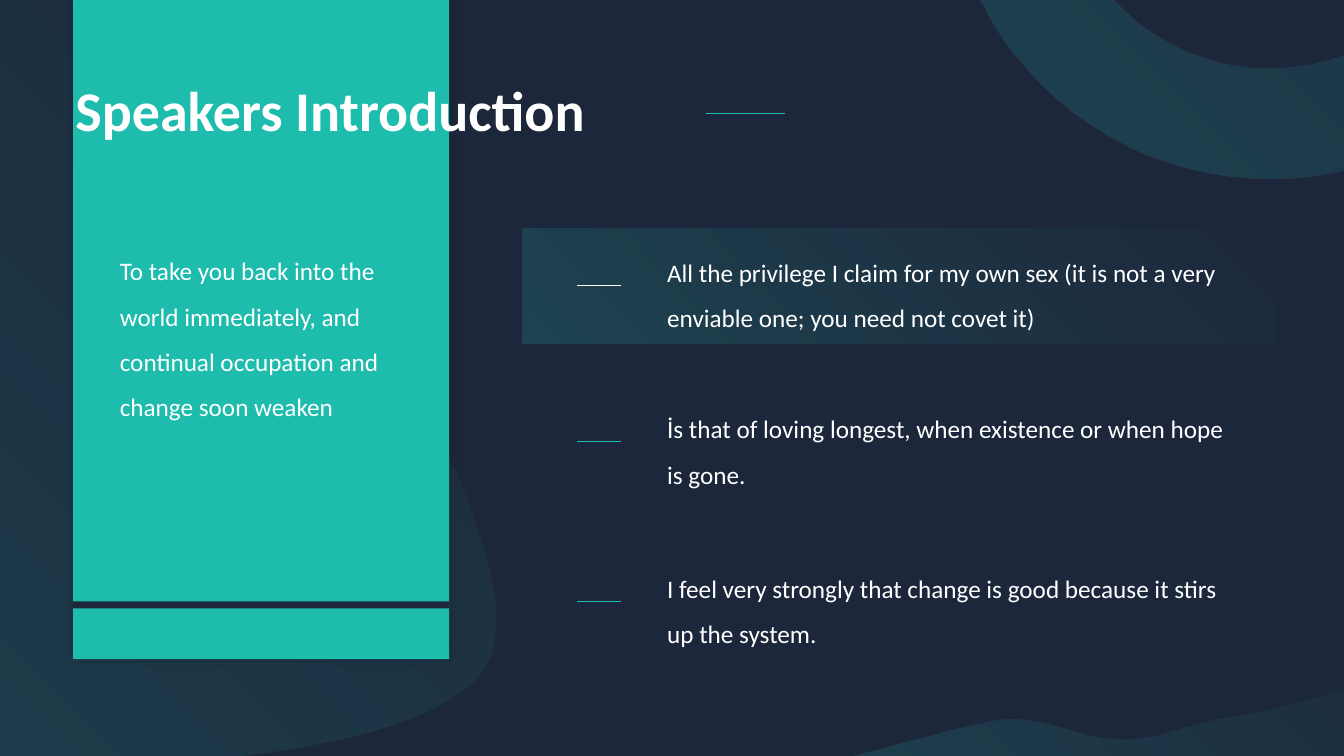
"""Build the speakers introduction slide with a teal side panel and three statements."""
from dataclasses import dataclass
from typing import Any, NamedTuple

from lxml.etree import SubElement
from pptx import Presentation
from pptx.dml.color import RGBColor
from pptx.enum.shapes import MSO_CONNECTOR, MSO_SHAPE
from pptx.enum.text import PP_ALIGN
from pptx.oxml import parse_xml
from pptx.oxml.ns import nsdecls, qn
from pptx.util import Emu, Inches, Pt

SLIDE_COLUMNS, SLIDE_ROWS = 133.33, 75
CELL = Inches(0.1)
Point = tuple[float, float]


@dataclass(frozen=True)
class Theme:
    navy: str = "1D273B"
    teal: str = "1EBCAD"
    white: str = "FFFFFF"
    black: str = "000000"
    font: str = "Calibri"
    title_size: float = 40
    body_size: float = 18
    rule_width: float = 0.75
    shadow_blur: float = 8
    tint_alpha: int = 20000


THEME = Theme()
BODY_FONT = {"size": Pt(THEME.body_size)}
BODY_PARAGRAPH = {"line_spacing": 1.5}


class Area(NamedTuple):
    column: float
    row: float
    columns: float
    rows: float


class Panel(NamedTuple):
    area: Area
    color: str | None = None
    kind: MSO_SHAPE = MSO_SHAPE.RECTANGLE
    ring: float | None = None
    shadow: bool = False


class Wave(NamedTuple):
    area: Area
    start: Point
    curves: list[tuple[Point, Point, Point]]


class Passage(NamedTuple):
    area: Area
    words: str
    font: dict[str, Any] = BODY_FONT
    paragraph: dict[str, Any] = BODY_PARAGRAPH


class Rule(NamedTuple):
    column: float
    row: float
    columns: float
    color: str = THEME.teal


class Statement(NamedTuple):
    row: float
    words: str
    color: str = THEME.teal


LEFT_WAVE = Wave(Area(-52.5, -15, 101.7, 92.2), (48.6, 64.8), [
    ((52.8, 53.5), (30.1, 18.2), (21.5, 9.6)),
    ((12.9, 1), (12.9, -18.9), (0.9, -14.3)),
    ((-11.1, -9.6), (-44.6, 22.8), (-50.7, 37.3)),
    ((-56.8, 51.9), (-47.3, 66.2), (-24.9, 71.3)),
    ((-11.6, 74.4), (-15.9, 78.1), (-3.6, 77)),
    ((8.6, 75.9), (44.5, 76), (48.6, 64.8)),
])
BOTTOM_WAVE = Wave(Area(72.7, 63.6, 82.9, 18.4), (74.5, 81.3), [
    ((65.7, 79.6), (91.1, 73.1), (98.1, 71.6)),
    ((105, 70.2), (108.1, 75.2), (116.1, 72.6)),
    ((124.2, 70), (129.2, 71.4), (140.3, 64.8)),
    ((151.4, 58.3), (161.9, 79.2), (151, 81.9)),
])
SUMMARY = Passage(
    Area(10.9, 23.36, 30.1, 19.2),
    "To take you back into the world immediately, and continual occupation and change soon weaken",
)
TITLE = Passage(
    Area(6.5, 7, 64.5, 7.7), "Speakers Introduction",
    {"size": Pt(THEME.title_size), "bold": True}, {"alignment": PP_ALIGN.JUSTIFY},
)
STATEMENTS = [
    Statement(23.5, "All the privilege I claim for my own sex (it is not a very enviable one; "
                    "you need not covet it)", THEME.white),
    Statement(39.05, "İs that of loving longest, when existence or when hope is gone."),
    Statement(54.88, "I feel very strongly that change is good because it stirs up the system."),
]


def cells(count: float) -> Emu:
    return Emu(round(count * CELL))


def set_values(target: Any, values: dict[str, Any]) -> None:
    for name, value in values.items():
        setattr(target, name, value)


def finish(shape: Any, color: str | None = None) -> None:
    shape.shadow.inherit = False
    shape.line.fill.background()
    if color:
        shape.fill.solid()
        shape.fill.fore_color.rgb = RGBColor.from_string(color)
        return
    shape.fill.background()
    stops = "".join(
        f'<a:gs pos="{position}"><a:srgbClr val="{THEME.teal}"><a:alpha val="{alpha}"/>'
        '</a:srgbClr></a:gs>' for position, alpha in ((0, THEME.tint_alpha), (100000, 0))
    )
    properties = shape._element.spPr
    properties.replace(properties.find(qn("a:noFill")), parse_xml(
        f'<a:gradFill {nsdecls("a")} rotWithShape="1"><a:gsLst>{stops}</a:gsLst>'
        '<a:path path="circle"><a:fillToRect t="100000" r="100000"/></a:path></a:gradFill>'
    ))


def draw_panel(shapes: Any, panel: Panel) -> None:
    shape = shapes.add_shape(panel.kind, *map(cells, panel.area))
    finish(shape, panel.color)
    if panel.ring is not None:
        shape.adjustments[0] = panel.ring
    if panel.shadow:
        cast = SubElement(shape._element.spPr.find(qn("a:effectLst")), qn("a:outerShdw"),
                          blurRad=str(Pt(THEME.shadow_blur)), dist="0", dir="0", algn="ctr")
        shade = SubElement(cast, qn("a:srgbClr"), val=THEME.black)
        SubElement(shade, qn("a:alpha"), val=str(THEME.tint_alpha))


def draw_wave(shapes: Any, wave: Wave) -> None:
    builder = shapes.build_freeform(*map(cells, wave.start))
    builder.add_line_segments([tuple(map(cells, curve[-1])) for curve in wave.curves])
    shape = builder.convert_to_shape()
    left, top, width, height = map(cells, wave.area)
    set_values(shape, {"left": left, "top": top, "width": width, "height": height})
    outline = next(shape._element.iter(qn("a:path")))
    for step in list(outline):
        outline.remove(step)
    set_values(outline, {"w": width, "h": height})
    steps = [("moveTo", [wave.start]), *(("cubicBezTo", curve) for curve in wave.curves)]
    if wave.curves[-1][-1] != wave.start:
        steps.append(("lnTo", [wave.start]))
    for kind, points in [*steps, ("close", [])]:
        step = SubElement(outline, qn(f"a:{kind}"))
        for column, row in points:
            SubElement(step, qn("a:pt"), x=str(cells(column) - left), y=str(cells(row) - top))
    finish(shape)


def draw_passage(shapes: Any, passage: Passage) -> None:
    box = shapes.add_textbox(*map(cells, passage.area))
    box.text_frame.word_wrap = True
    para = box.text_frame.paragraphs[0]
    set_values(para, passage.paragraph)
    span = para.add_run()
    span.text = passage.words
    set_values(span.font, {"name": THEME.font, **passage.font})
    span.font.color.rgb = RGBColor.from_string(THEME.white)


def draw_rule(shapes: Any, rule: Rule) -> None:
    left, right, row = map(cells, (rule.column, rule.column + rule.columns, rule.row))
    line = shapes.add_connector(MSO_CONNECTOR.STRAIGHT, left, row, right, row)
    line.line.width = Pt(THEME.rule_width)
    line.line.color.rgb = RGBColor.from_string(rule.color)
    SubElement(line._element.spPr, qn("a:effectLst"))


def main() -> None:
    deck = Presentation()
    set_values(deck, {"slide_width": cells(SLIDE_COLUMNS), "slide_height": cells(SLIDE_ROWS)})
    shapes = deck.slides.add_slide(deck.slide_layouts[6]).shapes
    draw_panel(shapes, Panel(Area(0, -0.1, SLIDE_COLUMNS, 75.1), THEME.navy))
    draw_panel(shapes, Panel(Area(51.85, 22.64, 74.8, 11.4)))
    draw_wave(shapes, LEFT_WAVE)
    draw_panel(shapes, Panel(Area(7.26, 0, 37.3, 65.4), THEME.teal, shadow=True))
    draw_passage(shapes, TITLE)
    draw_rule(shapes, Rule(70, 11.25, 7.9))
    draw_passage(shapes, SUMMARY)
    draw_panel(shapes, Panel(Area(7.23, 59.66, 37.3, 0.7), THEME.navy))
    draw_panel(shapes, Panel(Area(93.9, -46.45, 64.2, 64.2), kind=MSO_SHAPE.DONUT, ring=0.171))
    draw_wave(shapes, BOTTOM_WAVE)
    for row, words, color in STATEMENTS:
        group = shapes.add_group_shape().shapes
        draw_passage(group, Passage(Area(65.2, row, 59.1, 10.1), words))
        draw_rule(group, Rule(57.25, row + 4.8, 4.35, color))
    deck.save("out.pptx")


if __name__ == "__main__":
    main()
